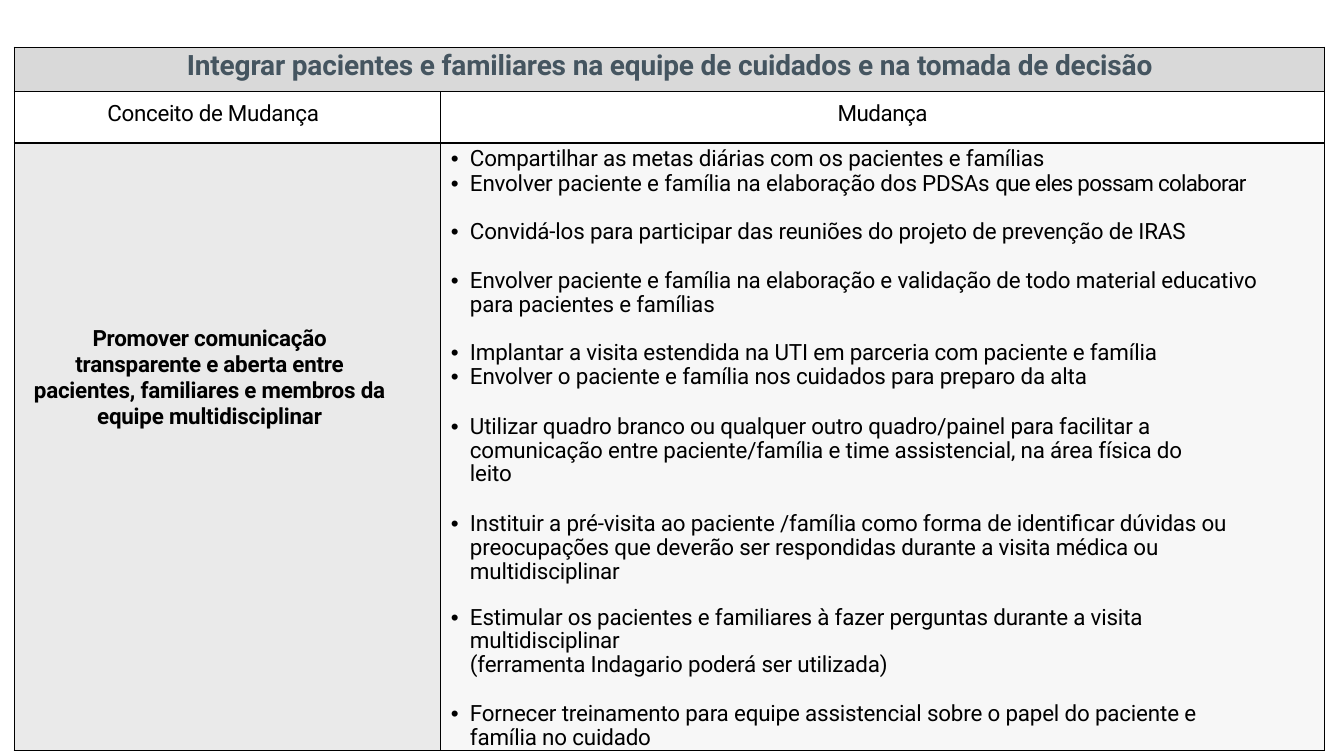
from lxml.etree import SubElement
from pptx import Presentation
from pptx.dml.color import RGBColor
from pptx.enum.text import PP_ALIGN
from pptx.oxml.ns import qn
from pptx.util import Pt

COLORS = {
    "title": "455560",
    "text": "000000",
    "border": "000000",
    "title_fill": "D9D9D9",
    "heading_fill": "FFFFFF",
    "concept_fill": "EAEAEA",
    "changes_fill": "F7F7F7",
}
FONT = "Roboto"
TRACKING = -0.1

TITLE = "Integrar pacientes e familiares na equipe de cuidados e na tomada de decisão"
CONCEPT = ("Promover comunicação transparente e aberta entre pacientes, "
           "familiares e membros da equipe multidisciplinar")

# Space before, line spacing, extra right indent (points), then (text, tracking) runs
CHANGES = [
    (0, None, 0, [("Compartilhar as metas diárias com os pacientes e famílias", TRACKING)]),
    (0.6, 17.2, 0, [("Envolver paciente e família na elaboração dos PDSAs ", TRACKING),
                    ("que eles possam colaborar", -0.5)]),
    (17.8, 16.7, 0, [("Convidá-los para participar das reuniões do projeto de prevenção de IRAS",
                      TRACKING)]),
    (18.2, 17, 0, [("Envolver paciente e família na elaboração e validação de todo "
                    "material educativo para pacientes e famílias", TRACKING)]),
    (18.5, 15.5, 0, [("Implantar a visita estendida na UTI em parceria com paciente e família",
                      TRACKING)]),
    (0, 17.2, 0, [("Envolver o paciente e família nos cuidados para preparo da alta", TRACKING)]),
    (18.8, 16.9, 39, [("Utilizar quadro branco ou qualquer outro quadro/painel para facilitar a "
                       "comunicação entre paciente/família e time assistencial, "
                       "na área física do leito", TRACKING)]),
    (18.6, 17, 0, [("Instituir a pré-visita ao paciente /família como forma de identificar "
                    "dúvidas ou preocupações que deverão ser respondidas durante a visita "
                    "médica ou multidisciplinar", TRACKING)]),
    (17.1, 16.3, 0, [("Estimular os pacientes e familiares à fazer perguntas durante a visita "
                      "multidisciplinar", TRACKING)]),
    (0, 17.1, 0, [("(ferramenta Indagario poderá ser utilizada)", TRACKING)]),
    (17.9, 16.9, 0, [("Fornecer treinamento para equipe assistencial sobre o papel do "
                      "paciente e família no cuidado", TRACKING)]),
]


def style_cell(cell, fill, left=0, top=0, right=0):
    """Give a cell thin borders, a fill and its margins."""
    properties = cell._tc.get_or_add_tcPr()
    for side in ("lnL", "lnR", "lnT", "lnB"):
        line = SubElement(properties, qn(f"a:{side}"), w=str(Pt(1)))
        line_fill = SubElement(line, qn("a:solidFill"))
        SubElement(line_fill, qn("a:srgbClr"), val=COLORS["border"])
    cell.fill.solid()
    cell.fill.fore_color.rgb = RGBColor.from_string(COLORS[fill])
    cell.margin_left, cell.margin_top = Pt(left), Pt(top)
    cell.margin_right, cell.margin_bottom = Pt(right), 0


def write(paragraph, runs, size=16, color="text", bold=False, align=PP_ALIGN.LEFT):
    paragraph.alignment = align
    font = paragraph.font
    font.name, font.size, font.bold = FONT, Pt(size), bold
    font.color.rgb = RGBColor.from_string(COLORS[color])
    for text, tracking in runs:
        run = paragraph.add_run()
        run.text = text
        run._r.get_or_add_rPr().set("spc", str(round(tracking * 100)))


def fill_changes(cell):
    style_cell(cell, "changes_fill", top=2, right=43)
    frame = cell.text_frame
    for index, (before, spacing, right, runs) in enumerate(CHANGES):
        paragraph = frame.add_paragraph() if index else frame.paragraphs[0]
        paragraph.space_before = Pt(before)
        if spacing:
            paragraph.line_spacing = Pt(spacing)
        properties = paragraph._p.get_or_add_pPr()
        properties.set("marL", str(Pt(21)))
        properties.set("marR", str(Pt(right)))
        if runs[0][0].startswith("("):
            properties.set("indent", "0")
        else:
            properties.set("indent", str(Pt(-13.7)))
            SubElement(properties, qn("a:buFont"), typeface="Arial")
            SubElement(properties, qn("a:buChar"), char="•")
        write(paragraph, runs)


def add_change_table(slide, left, top, widths, heights):
    frame = slide.shapes.add_table(len(heights), len(widths), Pt(left), Pt(top),
                                   Pt(sum(widths)), Pt(sum(heights)))
    table = frame.table
    table.first_row = table.horz_banding = False
    for column, width in zip(table.columns, widths):
        column.width = Pt(width)
    for row, height in zip(table.rows, heights):
        row.height = Pt(height)

    title, title_end = table.cell(0, 0), table.cell(0, 1)
    title.merge(title_end)
    style_cell(title, "title_fill", top=1.5)
    style_cell(title_end, "title_fill")
    write(title.text_frame.paragraphs[0], [(TITLE, -0.15)], 20, "title", True, PP_ALIGN.CENTER)

    concept_heading, change_heading = table.cell(1, 0), table.cell(1, 1)
    style_cell(concept_heading, "heading_fill", left=66.5, top=6.5)
    write(concept_heading.text_frame.paragraphs[0], [("Conceito de Mudança", -0.2)])
    style_cell(change_heading, "heading_fill", top=6.5)
    write(change_heading.text_frame.paragraphs[0], [("Mudança", -0.3)], align=PP_ALIGN.CENTER)

    concept = table.cell(2, 0)
    style_cell(concept, "concept_fill", left=11, top=130.5, right=36.5)
    write(concept.text_frame.paragraphs[0], [(CONCEPT, -0.15)], bold=True, align=PP_ALIGN.CENTER)
    fill_changes(table.cell(2, 1))


def main():
    presentation = Presentation()
    presentation.slide_width, presentation.slide_height = Pt(960), Pt(540)
    slide = presentation.slides.add_slide(presentation.slide_layouts[6])
    add_change_table(slide, left=10.2, top=33.8, widths=(304.5, 631.5),
                     heights=(31.7, 36.7, 433.5))
    presentation.save("out.pptx")


if __name__ == "__main__":
    main()
